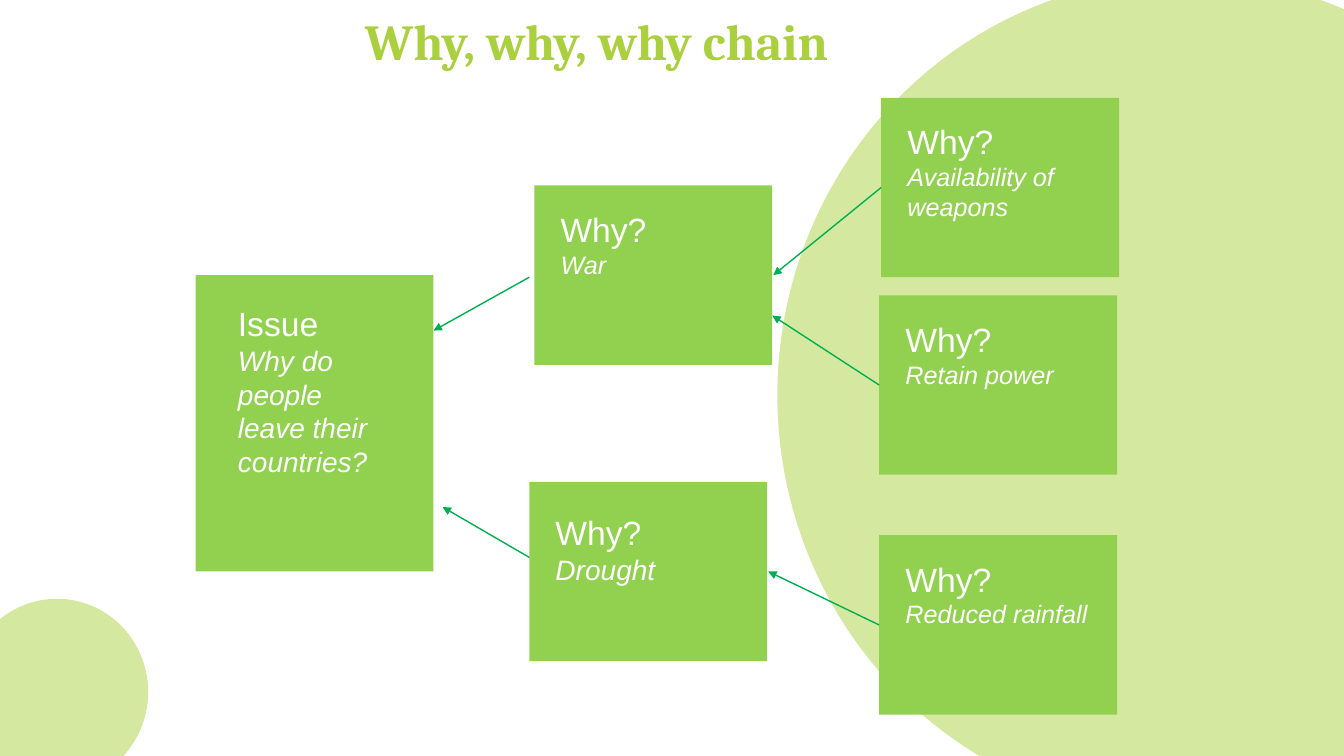
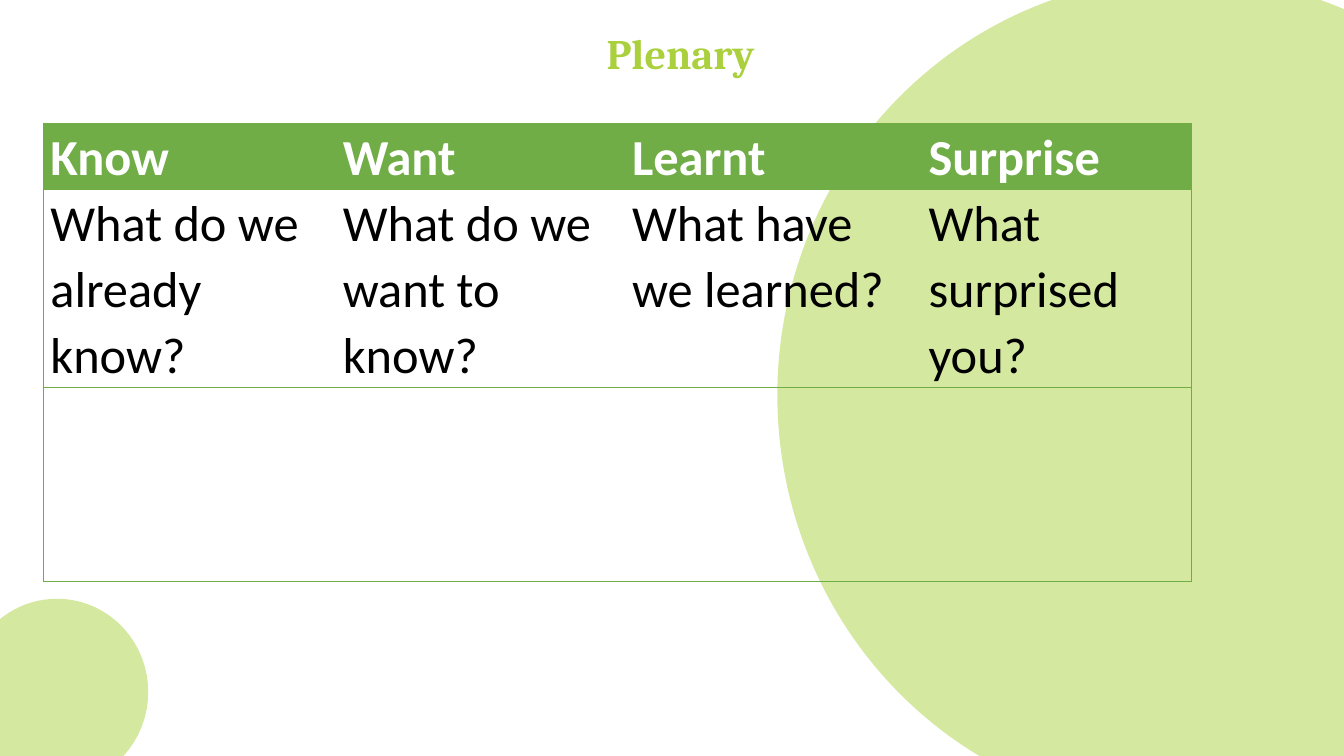
from lxml import etree
from pptx import Presentation
from pptx import util as u
from pptx.dml import color
from pptx.enum import shapes, text
from pptx.oxml import ns

COLOURS = {
    "title": "AAD03D",
    "circle": "D5E8A0",
    "card": "92D050",
    "arrow": "00B050",
    "table": "70AD47",
    "white": "FFFFFF",
    "black": "000000",
}
CIRCLES = [(7.71, -0.23, 8.11, 8.3), (-0.34, 5.94, 1.81, 1.85)]
PLAIN_TABLE = "{2D5ABB26-0587-4C30-8999-92F81FD0307C}"


def rgb(name):
    return color.RGBColor.from_string(COLOURS[name])


def inches(values):
    return [u.Inches(value) for value in values]


def apply(target, values):
    for name, value in values.items():
        setattr(target, name, value)


def add_xml(parent, tag, **attributes):
    return etree.SubElement(parent, ns.qn(tag), attributes)


class Deck:
    def __init__(self):
        self.deck = Presentation()
        self.deck.slide_width = u.Inches(13.33)
        self.deck.slide_height = u.Inches(7.5)
        self.layout = self.deck.slide_layouts[5]
        self.page = None

    def add_page(self):
        first = self.page is None
        self.page = self.deck.slides.add_slide(self.layout)
        if first:
            self.fill_layout()

    def fill_layout(self):
        tree = self.layout.shapes.element
        for holder in list(self.layout.placeholders):
            if holder.placeholder_format.idx:
                tree.remove(holder.element)
        circles = [self.add_filled(shapes.MSO_SHAPE.OVAL, at, "circle") for at in CIRCLES]
        for index, circle in enumerate(circles, 2):
            tree.insert(index, circle.element)

    def add_span(self, para, words, colour, **values):
        span = para.add_run()
        span.text = words
        apply(span.font, values)
        span.font.color.rgb = rgb(colour)

    def add_title(self, words, at, size, align, anchor, wrap=True, spacing=1.0):
        box = self.page.shapes.title
        apply(box, dict(zip(("left", "top", "width", "height"), inches(at))))
        apply(box.text_frame, {
            "word_wrap": wrap,
            "vertical_anchor": anchor,
            "auto_size": text.MSO_AUTO_SIZE.NONE,
        })
        para = box.text_frame.paragraphs[0]
        apply(para, {"alignment": align, "line_spacing": spacing})
        self.add_span(para, words, "title", name="Cambria", size=u.Pt(size), bold=True)

    def add_filled(self, kind, at, colour):
        shape = self.page.shapes.add_shape(kind, *inches(at))
        shape.shadow.inherit = False
        shape.fill.solid()
        shape.fill.fore_color.rgb = rgb(colour)
        shape.line.fill.background()
        return shape

    def add_card(self, at, heading, answer, size=18, insets=(0.26, 0.23, 0.1)):
        frame = self.add_filled(shapes.MSO_SHAPE.RECTANGLE, at, "card").text_frame
        apply(frame, dict(zip(("margin_left", "margin_top", "margin_right"), inches(insets))))
        apply(frame, {"word_wrap": True, "vertical_anchor": text.MSO_ANCHOR.TOP})
        lines = [(heading, 24, False), (answer, size, True)]
        for index, (words, points, italic) in enumerate(lines):
            para = frame.add_paragraph() if index else frame.paragraphs[0]
            para.alignment = text.PP_ALIGN.LEFT
            self.add_span(para, words, "white", name="Arial", size=u.Pt(points), italic=italic)

    def add_arrow(self, start, end):
        arrow = self.page.shapes.add_connector(
            shapes.MSO_CONNECTOR.STRAIGHT, *inches(start + end))
        arrow.line.color.rgb = rgb("arrow")
        arrow.line.width = u.Pt(1)
        properties = arrow.element.spPr
        add_xml(properties.find(ns.qn("a:ln")), "a:tailEnd", type="triangle")
        add_xml(properties, "a:effectLst")

    def add_table(self, at, widths, heights, rows):
        grid = self.page.shapes.add_table(len(heights), len(widths), *inches(at)).table
        grid.horz_banding = False
        grid._tbl.tblPr.find(ns.qn("a:tableStyleId")).text = PLAIN_TABLE
        for column, width in zip(grid.columns, inches(widths)):
            column.width = width
        for row, height in zip(grid.rows, inches(heights)):
            row.height = height
        last_row, last_column = len(heights) - 1, len(widths) - 1
        for r in range(len(heights)):
            for c in range(len(widths)):
                cell = grid.cell(r, c)
                sides = {
                    "a:lnL": c == 0,
                    "a:lnR": c == last_column,
                    "a:lnT": r < last_row,
                    "a:lnB": r > 0,
                }
                self.add_borders(cell, [side for side, shown in sides.items() if shown])
                self.fill_cell(cell, rows[r][c] if r < len(rows) else "", r == 0)

    def add_borders(self, cell, sides):
        for side in sides:
            line = add_xml(cell._tc.get_or_add_tcPr(), side, w=str(u.Pt(0.5)))
            fill = add_xml(line, "a:solidFill")
            add_xml(fill, "a:srgbClr", val=COLOURS["table"])

    def fill_cell(self, cell, words, header):
        margins = inches((0.07, 0, 0.07, 0))
        names = ("margin_left", "margin_top", "margin_right", "margin_bottom")
        apply(cell, dict(zip(names, margins)))
        if header:
            cell.fill.solid()
            cell.fill.fore_color.rgb = rgb("table")
        else:
            cell.fill.background()
        if words:
            para = cell.text_frame.paragraphs[0]
            para.line_spacing = 1.07
            self.add_span(para, words, "white" if header else "black",
                          name="Calibri", size=u.Pt(36), bold=header)


def add_why_chain(deck):
    deck.add_page()
    deck.add_title("Why, why, why chain", (3.52, 0.12, 9, 1.25), 36,
                   text.PP_ALIGN.LEFT, text.MSO_ANCHOR.TOP, spacing=0.9)
    deck.add_card((1.94, 2.73, 2.36, 2.94), "Issue",
                  "Why do people leave their countries?", 20, (0.42, 0.28, 0.49))
    reasons = [
        (5.3, 1.84, "War", {}),
        (5.25, 4.78, "Drought", {"size": 20, "insets": (0.26, 0.3, 0.1)}),
        (8.74, 0.97, "Availability of weapons", {}),
        (8.72, 2.93, "Retain power", {}),
        (8.72, 5.31, "Reduced rainfall", {}),
    ]
    for left, top, answer, style in reasons:
        deck.add_card((left, top, 2.36, 1.78), "Why?", answer, **style)
    arrows = [
        ((5.25, 2.75), (4.3, 3.28)),
        ((5.25, 5.53), (4.39, 5.03)),
        ((8.74, 1.86), (7.67, 2.73)),
        ((8.72, 3.82), (7.66, 3.13)),
        ((8.72, 6.2), (7.62, 5.67)),
    ]
    for start, end in arrows:
        deck.add_arrow(start, end)


def add_plenary(deck):
    deck.add_page()
    deck.add_title("Plenary", (5.81, 0.22, 1.88, 0.61), 30,
                   text.PP_ALIGN.CENTER, text.MSO_ANCHOR.MIDDLE, wrap=False)
    deck.add_table((0.43, 1.22, 11.39, 4.5), (2.9, 2.87, 2.94, 2.68), (0.64, 1.93, 1.93), [
        ("Know", "Want", "Learnt", "Surprise"),
        ("What do we already know?", "What do we want to know?",
         "What have we learned?", "What surprised you?"),
    ])


def main():
    deck = Deck()
    add_why_chain(deck)
    add_plenary(deck)
    deck.deck.save("out.pptx")


if __name__ == "__main__":
    main()
